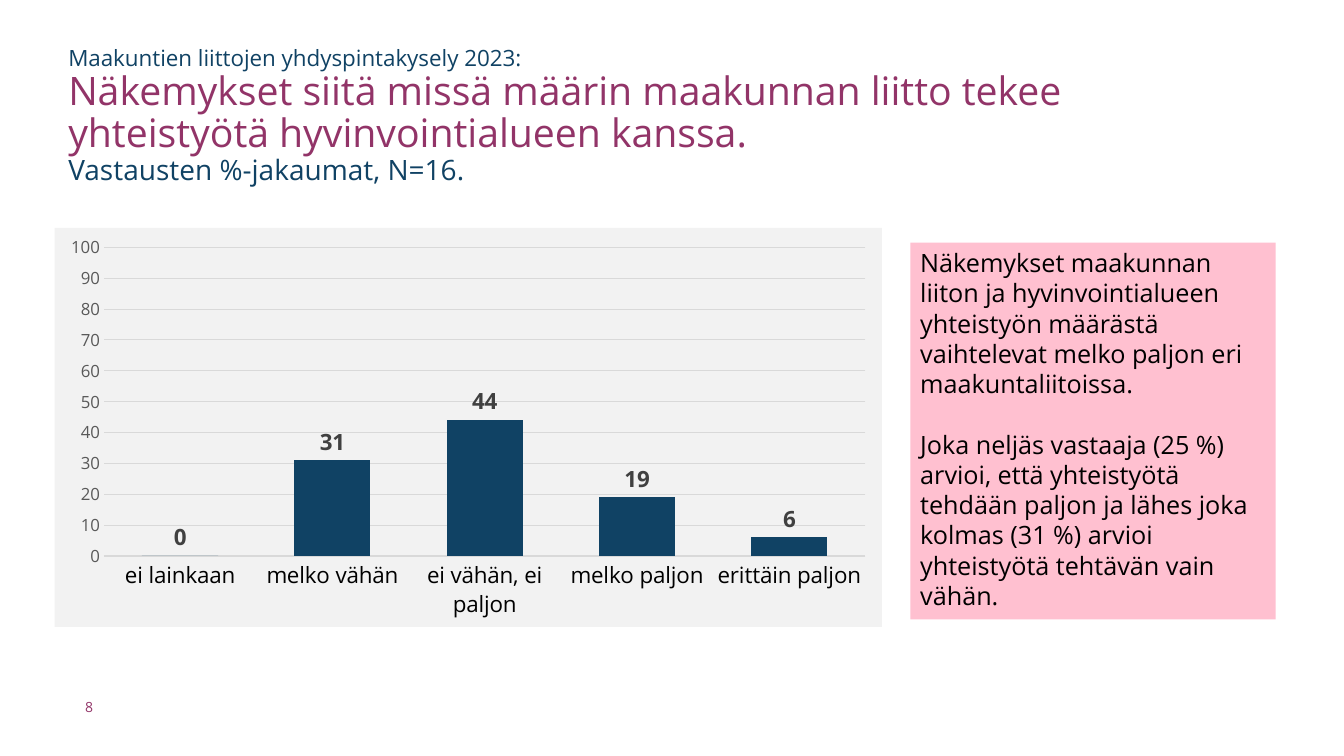
from dataclasses import dataclass
from typing import Any

from lxml import etree
from pptx import Presentation
from pptx import util as u
from pptx.chart.data import CategoryChartData
from pptx.dml.color import RGBColor
from pptx.enum import chart as ch, shapes, text
from pptx.oxml import parse_xml
from pptx.oxml.ns import nsdecls

PX = 9525
FONT = "Open Sans"
HUES = {
    "navy": "104264", "plum": "923468", "pink": "FFC0D0", "black": "000000",
    "pale": "F2F2F2", "grid": "D9D9D9", "gray": "595959", "dark": "404040",
}


@dataclass(frozen=True)
class Box:
    left: int
    top: int
    width: int
    height: int

    def emu(self) -> list[int]:
        return [n * PX for n in (self.left, self.top, self.width, self.height)]


@dataclass(frozen=True)
class Line:
    words: str
    size: int
    hue: str


HEAD = [
    Line("Maakuntien liittojen yhdyspintakysely 2023:", 16, "navy"),
    Line("Näkemykset siitä missä määrin maakunnan liitto tekee "
         "yhteistyötä hyvinvointialueen kanssa.", 28, "plum"),
    Line("Vastausten %-jakaumat, N=16.", 20, "navy"),
]
NOTES = [
    "Näkemykset maakunnan liiton ja hyvinvointialueen yhteistyön määrästä "
    "vaihtelevat melko paljon eri maakuntaliitoissa.",
    "Joka neljäs vastaaja (25 %) arvioi, että yhteistyötä tehdään paljon ja "
    "lähes joka kolmas (31 %) arvioi yhteistyötä tehtävän vain vähän.",
]
SHARES = {
    "ei lainkaan": 0, "melko vähän": 31, "ei vähän, ei paljon": 44,
    "melko paljon": 19, "erittäin paljon": 6,
}
BARE = {f"margin_{side}": 0 for side in ("left", "top", "right", "bottom")}


def rgb(hue: str) -> RGBColor:
    return RGBColor.from_string(HUES[hue])


def apply(item: Any, form: dict[str, Any]) -> None:
    """Set each named attribute of item."""
    for name, value in form.items():
        setattr(item, name, value)


def style(font: Any, size: int, hue: str, bold: bool = False) -> None:
    apply(font, {"name": FONT, "size": u.Pt(size), "bold": bold})
    font.color.rgb = rgb(hue)


def paint(fill: Any, hue: str) -> None:
    fill.solid()
    fill.fore_color.rgb = rgb(hue)


def rule(line: Any) -> None:
    line.color.rgb = rgb("grid")
    line.width = u.Pt(0.75)


def add_head(slide: Any, box: Box) -> None:
    title = slide.shapes.title
    apply(title, dict(zip(("left", "top", "width", "height"), box.emu())))
    frame = title.text_frame
    apply(frame, BARE | {"word_wrap": True, "auto_size": text.MSO_AUTO_SIZE.NONE,
                         "vertical_anchor": text.MSO_ANCHOR.TOP})
    para = frame.paragraphs[0]
    apply(para, {"alignment": text.PP_ALIGN.LEFT, "line_spacing": 0.9})
    for index, line in enumerate(HEAD):
        if index:
            para.add_line_break()
        run = para.add_run()
        run.text = line.words
        style(run.font, line.size, line.hue)


def add_notes(slide: Any, box: Box) -> None:
    panel = slide.shapes.add_shape(shapes.MSO_SHAPE.RECTANGLE, *box.emu())
    panel.shadow.inherit = False
    paint(panel.fill, "pink")
    panel.line.fill.background()
    frame = panel.text_frame
    apply(frame, {"word_wrap": True, "vertical_anchor": text.MSO_ANCHOR.TOP,
                  "auto_size": text.MSO_AUTO_SIZE.SHAPE_TO_FIT_TEXT})
    for index, words in enumerate(NOTES):
        para = frame.add_paragraph() if index else frame.paragraphs[0]
        para.text = words
        para.alignment = text.PP_ALIGN.LEFT
        if index:
            para.space_before = u.Pt(21.6)
        style(para.font, 18, "black")


def add_bars(slide: Any, box: Box) -> None:
    data = CategoryChartData()
    data.categories = list(SHARES)
    data.add_series("Series 1", list(SHARES.values()))
    kind = ch.XL_CHART_TYPE.COLUMN_CLUSTERED
    chart = slide.shapes.add_chart(kind, *box.emu(), data).chart
    apply(chart, {"has_title": False, "has_legend": False})
    style(chart.font, 10, "black")

    plot = chart.plots[0]
    apply(plot, {"gap_width": 100, "overlap": -27, "vary_by_categories": False,
                 "has_data_labels": True})
    paint(plot.series[0].format.fill, "navy")
    labels = plot.data_labels
    apply(labels, {"show_value": True,
                   "position": ch.XL_LABEL_POSITION.OUTSIDE_END})
    style(labels.font, 16, "dark", True)

    for axis, size, hue in ((chart.category_axis, 16, "black"),
                            (chart.value_axis, 12, "gray")):
        apply(axis, {"major_tick_mark": ch.XL_TICK_MARK.NONE,
                     "minor_tick_mark": ch.XL_TICK_MARK.NONE})
        style(axis.tick_labels.font, size, hue)
    rule(chart.category_axis.format.line)
    scale = chart.value_axis
    apply(scale, {"minimum_scale": 0, "maximum_scale": 100, "major_unit": 10,
                  "has_major_gridlines": True})
    rule(scale.major_gridlines.format.line)
    scale.format.line.fill.background()
    add_back(chart)


def add_back(chart: Any) -> None:
    """Fill the chart area, which has no public format."""
    back = parse_xml(f"<c:spPr {nsdecls('c', 'a')}/>")
    space = "{http://schemas.openxmlformats.org/drawingml/2006/main}"
    fill = etree.SubElement(back, space + "solidFill")
    etree.SubElement(fill, space + "srgbClr", val=HUES["pale"])
    line = etree.SubElement(back, space + "ln")
    etree.SubElement(line, space + "noFill")
    chart.element.chart.addnext(back)


def add_page(slide: Any, box: Box) -> None:
    frame = slide.shapes.add_textbox(*box.emu()).text_frame
    apply(frame, BARE | {"word_wrap": True,
                         "vertical_anchor": text.MSO_ANCHOR.MIDDLE})
    para = frame.paragraphs[0]
    para.text = "8"
    style(para.font, 10, "plum")


def main() -> None:
    deck = Presentation()
    apply(deck, {"slide_width": 1280 * PX, "slide_height": 720 * PX})
    slide = deck.slides.add_slide(deck.slide_layouts[5])
    add_page(slide, Box(81, 662, 45, 23))
    add_notes(slide, Box(867, 231, 348, 359))
    add_head(slide, Box(65, 45, 1119, 106))
    add_bars(slide, Box(52, 217, 788, 380))
    deck.save("out.pptx")


if __name__ == "__main__":
    main()
